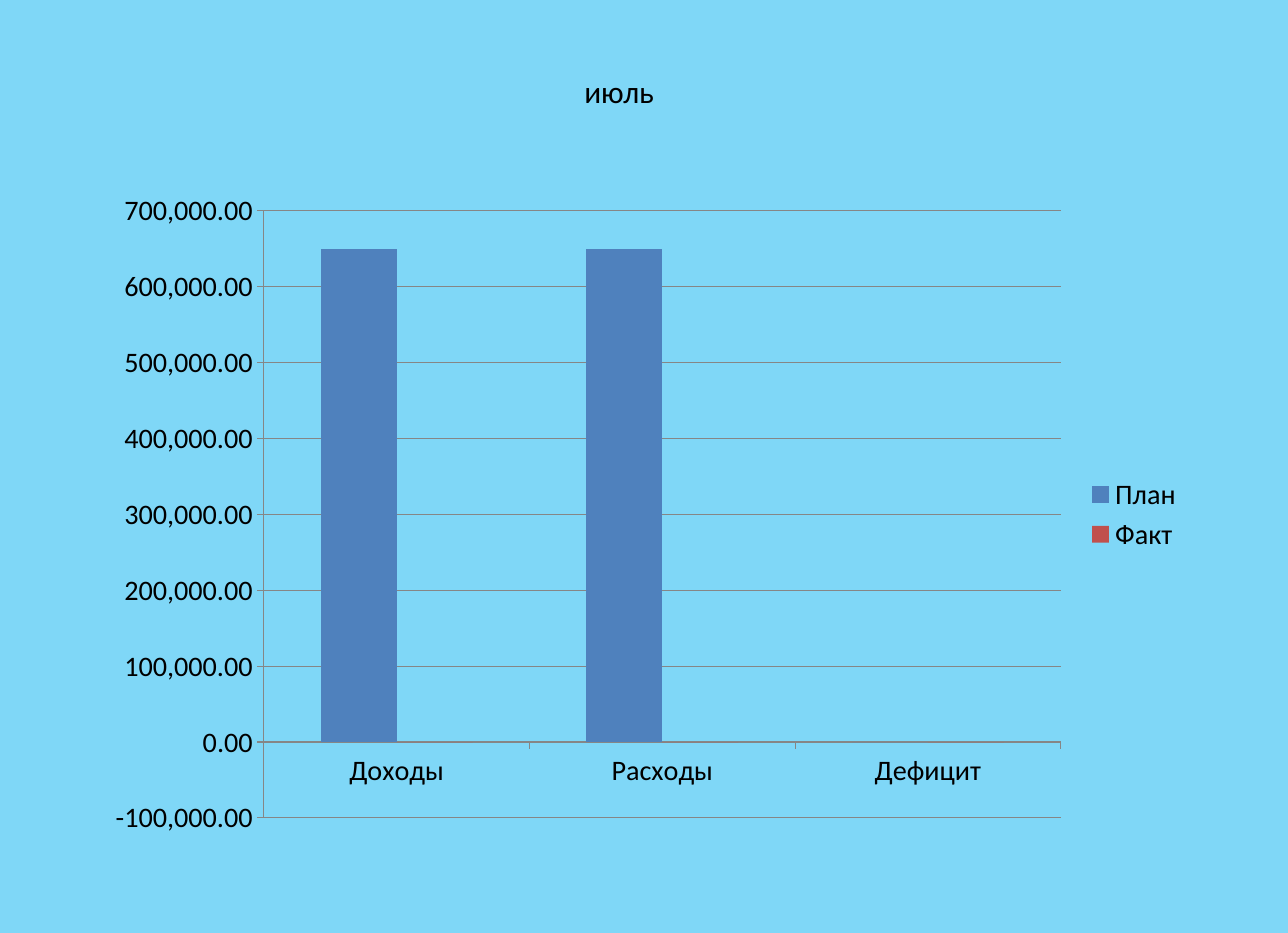
from pptx import Presentation
from pptx.chart.data import CategoryChartData as ChartData
from pptx.dml.color import RGBColor as RGB
from pptx.enum.chart import XL_CHART_TYPE as Kind, XL_LEGEND_POSITION as Side
from pptx.enum.chart import XL_TICK_MARK as Tick
from pptx.enum.text import MSO_ANCHOR as Anchor, PP_ALIGN as Align
from pptx.util import Inches, Pt

SKY = RGB(0x7F, 0xD7, 0xF7)
BLACK = RGB(0, 0, 0)
GREY = RGB(0x86, 0x86, 0x86)
BLUE = RGB(0x4F, 0x81, 0xBD)
RED = RGB(0xC0, 0x50, 0x4D)
FACE = "Calibri"

prs = Presentation()
prs.slide_width, prs.slide_height = Inches(11.42), Inches(8.27)
slide = prs.slides.add_slide(prs.slide_layouts[5])
slide.background.fill.solid()
slide.background.fill.fore_color.rgb = SKY

# Title
title = slide.shapes.title
title.left, title.top = Inches(5.08), Inches(0.59)
title.width, title.height = Inches(0.82), Inches(0.44)
frame = title.text_frame
frame.word_wrap = False
frame.vertical_anchor = Anchor.MIDDLE
para = frame.paragraphs[0]
para.alignment = Align.CENTER
run = para.add_run()
run.text = "июль"
run.font.name, run.font.size = FACE, Pt(20)
run.font.color.rgb = BLACK

# Budget chart
data = ChartData(number_format="#,##0.00")
data.categories = ["Доходы", "Расходы", "Дефицит"]
data.add_series("План", [650000, 650000, 0])
data.add_series("Факт", [0, 0, 0])
chart = slide.shapes.add_chart(
    Kind.COLUMN_CLUSTERED, Inches(0.83), Inches(1.6), Inches(9.76), Inches(5.92), data
).chart
chart.has_title = False
chart.font.name, chart.font.size = FACE, Pt(18)
chart.font.color.rgb = BLACK
chart.has_legend = True
chart.legend.position = Side.RIGHT
chart.legend.include_in_layout = False

plot = chart.plots[0]
plot.gap_width, plot.overlap = 150, 0
plot.vary_by_categories = False
for series, color in zip(plot.series, (BLUE, RED)):
    series.invert_if_negative = False
    series.format.fill.solid()
    series.format.fill.fore_color.rgb = color

cats, vals = chart.category_axis, chart.value_axis
vals.minimum_scale, vals.maximum_scale = -100000, 700000
vals.major_unit = 100000
vals.tick_labels.number_format = "#,##0.00"
vals.tick_labels.number_format_is_linked = False
vals.has_major_gridlines = True
cats.has_major_gridlines = False
for axis in (cats, vals):
    axis.major_tick_mark, axis.minor_tick_mark = Tick.OUTSIDE, Tick.NONE
for part in (cats, vals, vals.major_gridlines):
    part.format.line.color.rgb = GREY

prs.save("out.pptx")
